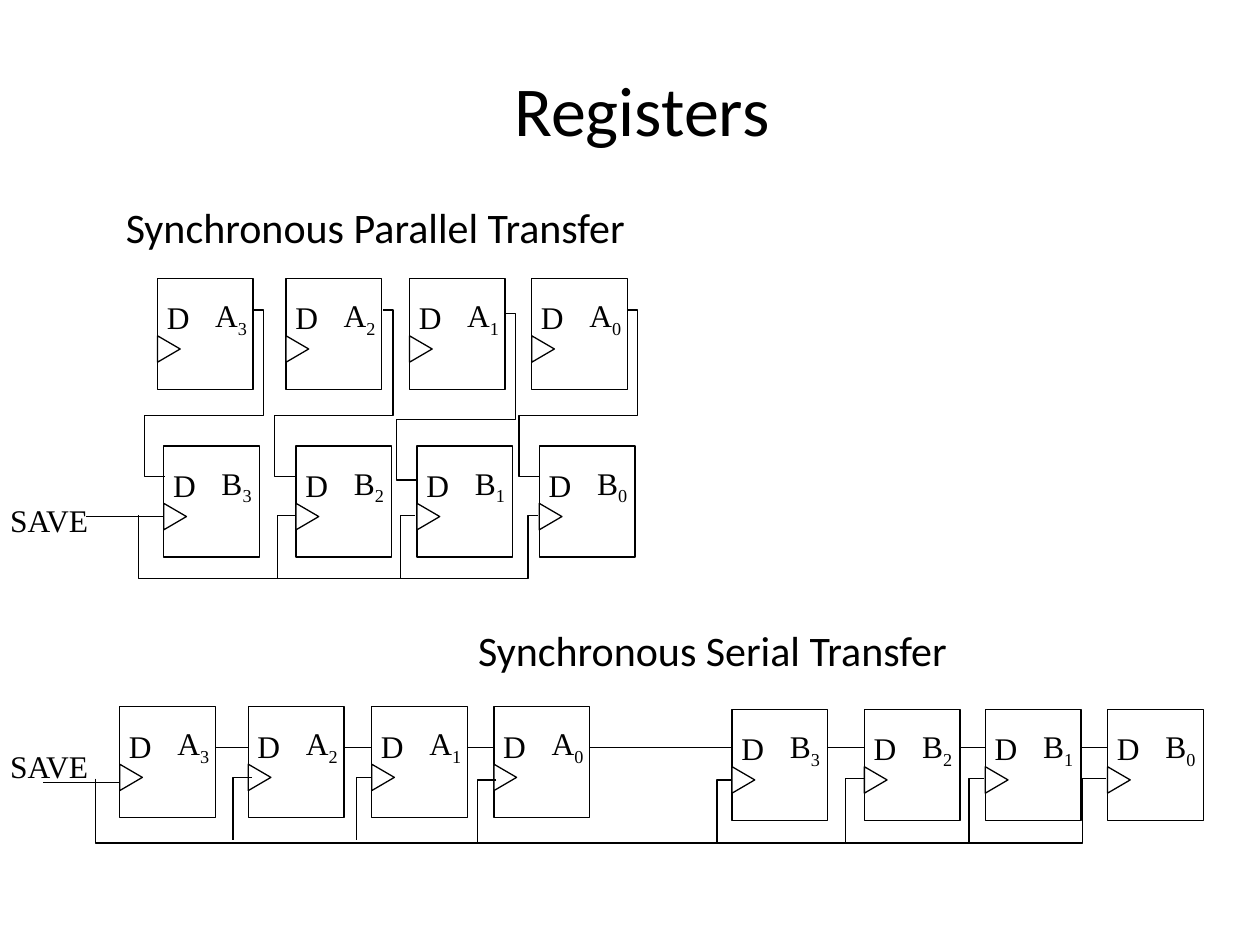
from pptx import Presentation
from pptx import util as u
from pptx.dml.color import RGBColor
from pptx.enum import shapes, text
from pptx.oxml.ns import qn
from lxml import etree

COLS = 100  # square grid cells across the slide
BLACK, WHITE = "000000", "FFFFFF"
SANS = {"name": "Calibri", "size": u.Pt(24)}
SERIF = {"name": "Times New Roman", "size": u.Pt(18)}
BOX_W, BOX_H = 7.6, 8.8


def rgb(code):
    return RGBColor.from_string(code)


class Diagram:
    """Draws on one slide; all lengths are counted in grid cells."""

    def __init__(self, prs):
        self.s = prs.slides.add_slide(prs.slide_layouts[6])
        self.cell = prs.slide_width / COLS

    def emu(self, *cells):
        return [round(c * self.cell) for c in cells]

    def outline(self, sp, line=BLACK, fill=None):
        sp.line.color.rgb = rgb(line)
        sp.line.width = u.Pt(0.75)
        sp.shadow.inherit = False
        if fill:
            sp.fill.solid()
            sp.fill.fore_color.rgb = rgb(fill)
        else:
            sp.fill.background()
        return sp

    def set_text(self, sp, words, style, sub="", align="LEFT", **frame):
        tf = sp.text_frame
        for key, value in {"word_wrap": True, "vertical_anchor": text.MSO_ANCHOR.TOP, **frame}.items():
            setattr(tf, key, value)
        p = tf.paragraphs[0]
        p.alignment = getattr(text.PP_ALIGN, align)
        for part in filter(None, (words, sub)):
            r = p.add_run()
            r.text = part
            for key, value in style.items():
                setattr(r.font, key, value)
            r.font.color.rgb = rgb(BLACK)
            if part == sub:
                r._r.get_or_add_rPr().set("baseline", "-25000")

    def label(self, x, y, w, h, words, style, **options):
        self.set_text(self.s.shapes.add_textbox(*self.emu(x, y, w, h)), words, style, **options)

    def shape(self, kind, x, y, w, h, **colours):
        sp = self.s.shapes.add_shape(getattr(shapes.MSO_SHAPE, kind), *self.emu(x, y, w, h))
        return self.outline(sp, **colours)

    def line(self, x1, x2, y):
        c = self.s.shapes.add_connector(shapes.MSO_CONNECTOR.STRAIGHT, *self.emu(x1, y, x2, y))
        c.line.color.rgb = rgb(BLACK)
        c.line.width = u.Pt(0.75)
        etree.SubElement(c._element.spPr, qn("a:effectLst"))

    def wire(self, *points):
        start, *rest = [self.emu(*point) for point in points]
        fb = self.s.shapes.build_freeform(*start)
        fb.add_line_segments(rest, close=False)
        self.outline(fb.convert_to_shape())

    def branch(self, x, end, y, drop=5):
        """Clock tap: from a flip-flop at end back to x, then down to the rail."""
        self.wire((end, y), (x, y), (x, y + drop))

    def flip_flop(self, x, y, name, bit):
        self.shape("RECTANGLE", x, y, BOX_W, BOX_H, fill=WHITE)
        self.shape("ISOSCELES_TRIANGLE", x - 0.15, y + 4.7, 2.1, 1.8, fill=WHITE).rotation = 90
        self.label(x - 0.25, y + 1.1, 4.9, 4.7, "D", SERIF)
        self.label(x + 3.6, y + 0.9, 5.7, 4.6, name, SERIF, sub=str(bit))

    def register(self, name, lefts, y):
        for i, x in enumerate(lefts):
            self.flip_flop(x, y, name, len(lefts) - 1 - i)

    def save_input(self, y, x1, x2, line_y):
        sp = self.shape("RECTANGLE", 0.8, y, 6.7, 2.3, line=WHITE)
        margins = dict.fromkeys(("margin_left", "margin_top", "margin_right", "margin_bottom"), 0)
        self.set_text(sp, "SAVE", SERIF, **margins)
        self.line(x1, x2, line_y)


def parallel_transfer(d, a_lefts, b_lefts):
    a_top, b_top, clock, rail = 22.1, 35.4, 40.9, 45.9
    d.label(9, 15.5, 42.7, 5, "Synchronous Parallel Transfer", SANS, word_wrap=False)
    d.register("B", b_lefts, b_top)
    d.register("A", a_lefts, a_top)
    for x, y in zip((12.5, 22.8, 32.5, 42.2), (24.6, 24.6, 24.9, 24.6)):
        right, left = x + 8.4, x - 1
        d.wire((x + BOX_W, y), (right, y), (right, y + 8.4), (left, y + 8.4),
               (left, y + 13.2), (x + 0.6, y + 13.2))
    d.save_input(39.8, 12.9, 6.8, 41)
    d.wire((11, clock), (11, rail), (41.9, rail), (41.9, clock), (42.7, clock))
    for x, end in ((22, 23.5), (31.8, 32.9)):
        d.branch(x, end, clock)


def serial_transfer(d, a_lefts, b_lefts):
    a_top, b_top, clock, rail = 56.1, 56.3, 61.8, 66.9
    d.label(36.5, 49.1, 40.1, 5, "Synchronous Serial Transfer", SANS, align="CENTER", word_wrap=False)
    d.register("B", [x + 45.1 for x in b_lefts], b_top)
    d.register("A", [x - 3 for x in a_lefts], a_top)
    d.save_input(59.3, 9.5, 3.4, 62.1)
    d.wire((7.6, clock), (7.6, rail), (85.9, rail), (85.9, clock), (87.8, clock))
    for x, end, y in ((67.1, 68.6, clock), (76.9, 78.1, clock), (18.5, 20, 61.7),
                      (28.3, 29.5, 61.7), (37.9, 39.4, 61.9), (56.9, 58.1, 61.9)):
        d.branch(x, end, y)


def main():
    prs = Presentation()
    prs.slide_width, prs.slide_height = u.Inches(10), u.Inches(7.5)
    d = Diagram(prs)
    d.line(17, 90.7, 59.3)  # serial data line, behind the flip-flops
    d.label(13.9, 4.8, 74.1, 7.7, "Registers", {**SANS, "size": u.Pt(40)}, align="CENTER")
    lefts = (12.5, 22.7, 32.5, 42.2), (13, 23.5, 33.1, 42.8)
    parallel_transfer(d, *lefts)
    serial_transfer(d, *lefts)
    prs.save("out.pptx")


if __name__ == "__main__":
    main()
